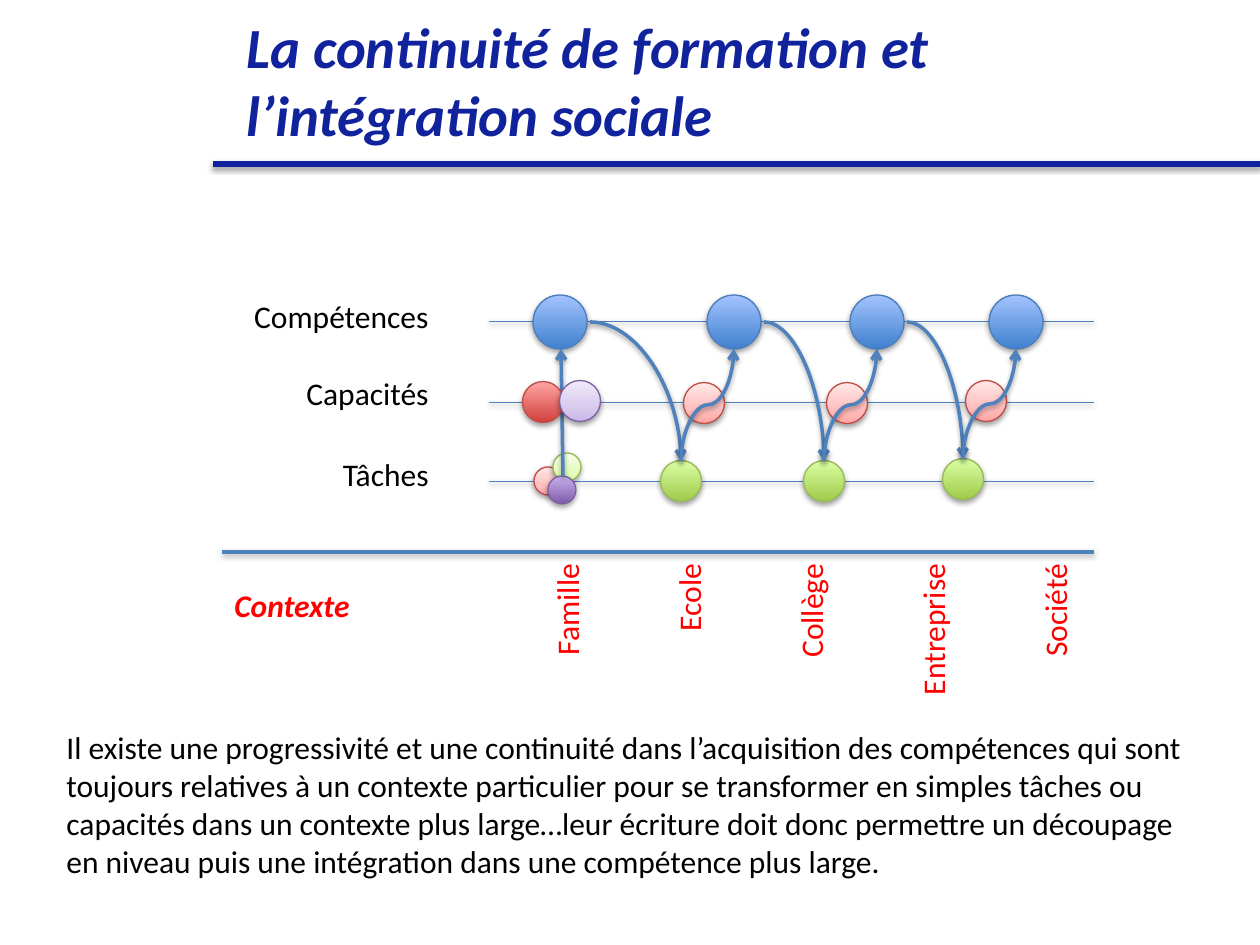
from lxml import etree
from pptx import Presentation
from pptx.dml.color import RGBColor
from pptx.enum.shapes import MSO_CONNECTOR, MSO_SHAPE
from pptx.enum.text import MSO_ANCHOR, PP_ALIGN
from pptx.oxml import parse_xml
from pptx.oxml.ns import nsdecls, qn
from pptx.util import Emu, Pt

STRAIGHT, CURVE = MSO_CONNECTOR.STRAIGHT, MSO_CONNECTOR.CURVE
LEFT, RIGHT = PP_ALIGN.LEFT, PP_ALIGN.RIGHT
TOP, MIDDLE = MSO_ANCHOR.TOP, MSO_ANCHOR.MIDDLE

# Content
TITLE = "La continuité de formation et l’intégration sociale"
LEVELS = [  # label, left, top, height, guide line y
    ("Compétences", 179, 291, 57, 321),
    ("Capacités", 222, 368, 55, 402),
    ("Tâches", 222, 449, 55, 481),
]
CONTEXT_LABEL = "Contexte"
CONTEXTS = ["Famille", "Ecole", "Collège", "Entreprise", "Société"]
SUMMARY = (
    "Il existe une progressivité et une continuité dans l’acquisition des "
    "compétences qui sont toujours relatives à un contexte particulier pour "
    "se transformer en simples tâches ou capacités dans un contexte plus "
    "large…leur écriture doit donc permettre un découpage en niveau puis une "
    "intégration dans une compétence plus large."
)
STAGES = [(734, 481), (877, 481), (1016, 479)]  # skill centre x, task centre y

# Theme
THEME = {
    "font": "Calibri", "title_size": 32.4, "text_size": 18,
    "title": "11229D", "text": "000000", "context": "FF0000", "line": "4F81BD",
    "title_rule": 3, "strong": 2, "guide": 0.5, "outline": 0.75,
}
BALLS = {  # outline, gradient stops from bottom to top
    "blue": ("4B7EBC", [(0, "3F80CE"), (100, "A4C4FF")]),
    "green": ("98B955", [(0, "A0CA4A"), (100, "DAFFA5")]),
    "pale green": ("98B955", [(0, "DAFDA7"), (35, "E4FCC2"), (100, "F5FFE7")]),
    "red": ("BF4C48", [(0, "D1403C"), (100, "FFA6A5")]),
    "pale red": ("BF4C48", [(0, "FFA6A5"), (35, "FFC0BF"), (100, "FFE7E7")]),
    "purple": ("7D60A0", [(0, "7F5BAB"), (100, "C8B0ED")]),
    "pale purple": ("7D60A0", [(0, "C9B5E8"), (35, "D8CBEE"), (100, "F0EAF9")]),
}
BIG, MEDIUM, SMALL = 54, 41, 28  # ball diameters
SKILL_Y = 322
GUIDE_LEFT, GUIDE_RIGHT = 489, 1094


def px(value):
    return Emu(round(value * 914400 / 126))


def add_shadow(effects):
    shadow = etree.SubElement(effects, qn("a:outerShdw"), blurRad="39370",
                              dist="20320", dir="5400000", rotWithShape="0")
    color = etree.SubElement(shadow, qn("a:srgbClr"), val="000000")
    etree.SubElement(color, qn("a:alpha"), val="37000")


def write(shape, text, size=THEME["text_size"], color=THEME["text"], strong=False,
          align=LEFT, anchor=TOP):
    frame = shape.text_frame
    frame.word_wrap = True
    frame.vertical_anchor = anchor
    para = frame.paragraphs[0]
    para.alignment = align
    span = para.add_run()
    span.text = text
    font = span.font
    font.name, font.size = THEME["font"], Pt(size)
    font.bold = font.italic = strong
    font.color.rgb = RGBColor.from_string(color)


def add_text(page, text, left, top, width, height, rotation=0, **style):
    box = page.shapes.add_textbox(px(left), px(top), px(width), px(height))
    box.rotation = rotation
    write(box, text, **style)


def add_line(page, start, end, width=THEME["strong"], color=THEME["line"],
             kind=STRAIGHT, arrow=False):
    line = page.shapes.add_connector(kind, *map(px, start + end))
    line.line.color.rgb = RGBColor.from_string(color)
    line.line.width = Pt(width)
    properties = line.element.spPr
    if arrow:
        etree.SubElement(properties.find(qn("a:ln")), qn("a:tailEnd"), type="arrow")
    add_shadow(etree.SubElement(properties, qn("a:effectLst")))
    return line


def add_drop(page, start, end):
    """Quarter curve that leaves sideways and arrives downwards."""
    line = add_line(page, start, end, kind=CURVE, arrow=True)
    line.element.spPr.find(qn("a:prstGeom")).set("prst", "curvedConnector2")


def add_rise(page, start, end):
    """S curve that leaves and arrives upwards: a flipped box turned by 90°."""
    (x1, y1), (x2, y2) = start, end
    middle_x, middle_y = (x1 + x2) / 2, (y1 + y2) / 2
    half_length, half_width = (y1 - y2) / 2, (x2 - x1) / 2
    line = add_line(page, (middle_x + half_length, middle_y + half_width),
                    (middle_x - half_length, middle_y - half_width),
                    kind=CURVE, arrow=True)
    line.element.spPr.find(qn("a:xfrm")).set("rot", "5400000")


def add_ball(page, style, x, y, size):
    outline, stops = BALLS[style]
    ball = page.shapes.add_shape(MSO_SHAPE.OVAL, px(x - size / 2), px(y - size / 2),
                                 px(size), px(size))
    ball.line.color.rgb = RGBColor.from_string(outline)
    ball.line.width = Pt(THEME["outline"])
    ball.fill.gradient()
    ball.fill.gradient_angle = 90
    properties = ball.element.spPr
    old_stops = properties.find(qn("a:gradFill")).find(qn("a:gsLst"))
    stop_xml = "".join(f'<a:gs pos="{at * 1000}"><a:srgbClr val="{color}"/></a:gs>'
                       for at, color in stops)
    new_stops = parse_xml(f'<a:gsLst {nsdecls("a")}>{stop_xml}</a:gsLst>')
    old_stops.getparent().replace(old_stops, new_stops)
    ball.shadow.inherit = False
    add_shadow(properties.find(qn("a:effectLst")))


def main():
    deck = Presentation()
    deck.slide_width, deck.slide_height = px(1260), px(945)
    page = deck.slides.add_slide(deck.slide_layouts[5])

    # Title and rule
    add_line(page, (213, 164), (1260, 164), THEME["title_rule"], THEME["title"])
    title = page.shapes.title
    title.left, title.top, title.width, title.height = map(px, (234, 1, 963, 158))
    write(title, TITLE, size=THEME["title_size"], color=THEME["title"], strong=True,
          anchor=MIDDLE)

    # Contexts under the divider
    add_line(page, (222, 552), (GUIDE_RIGHT, 552))
    add_text(page, CONTEXT_LABEL, 222, 580, 219, 50, color=THEME["context"], strong=True)
    for index, context in enumerate(CONTEXTS):
        add_text(page, context, 481 + 122 * index, 612, 171, 50, rotation=270,
                 color=THEME["context"], align=RIGHT)

    # Levels
    for label, left, top, height, guide_y in LEVELS:
        add_text(page, label, left, top, 441 - left, height, align=RIGHT)
        add_line(page, (GUIDE_LEFT, guide_y), (GUIDE_RIGHT, guide_y), THEME["guide"])

    # Family: several tasks and capacities lead to the first skill
    family_x = 560
    add_ball(page, "pale red", 548, 481, SMALL)
    add_ball(page, "pale green", 567, 467, SMALL)
    add_ball(page, "purple", 562, 490, SMALL)
    add_ball(page, "blue", family_x, SKILL_Y, BIG)
    add_line(page, (563, 476), (561, 349), arrow=True)
    add_ball(page, "red", 543, 402, MEDIUM)
    add_ball(page, "pale purple", 580, 401, MEDIUM)

    # Each skill becomes a task of the next stage
    previous_x = family_x
    for skill_x, task_y in STAGES:
        task_x, task_top = skill_x - 53, task_y - 20
        add_ball(page, "green", task_x, task_y, MEDIUM)
        add_ball(page, "pale red", skill_x - 30, task_y - 78, MEDIUM)
        add_ball(page, "blue", skill_x, SKILL_Y, BIG)
        add_drop(page, (previous_x + 30, SKILL_Y), (task_x, task_top))
        add_rise(page, (task_x, task_top), (skill_x, SKILL_Y + 27))
        previous_x = skill_x

    # Summary
    add_text(page, SUMMARY, 54, 722, 1143, 204)
    deck.save("out.pptx")


if __name__ == "__main__":
    main()
